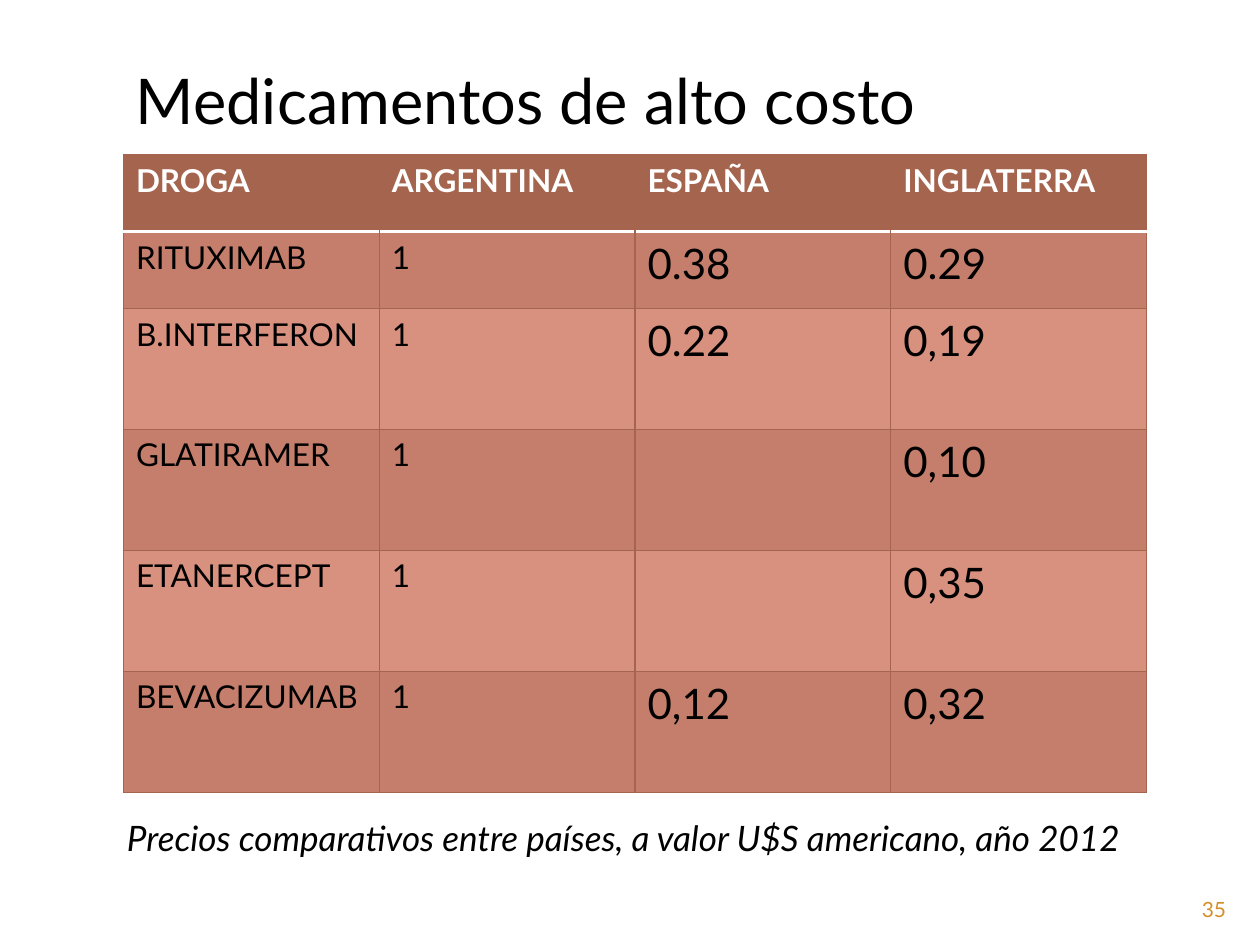
from lxml import etree
from pptx import Presentation
from pptx.dml.color import RGBColor
from pptx.enum.text import MSO_ANCHOR as ANCHOR, PP_ALIGN as ALIGN
from pptx.oxml.ns import qn
from pptx.util import Inches, Pt

COLORS = {
    "brown": "A5644E",
    "dark_band": "C47E6B",
    "light_band": "D8907F",
    "white": "FFFFFF",
    "black": "000000",
    "gold": "D48F29",
}
ROWS = [
    ["DROGA", "ARGENTINA", "ESPAÑA", "INGLATERRA"],
    ["RITUXIMAB", "1", "0.38", "0.29"],
    ["B.INTERFERON", "1", "0.22", "0,19"],
    ["GLATIRAMER", "1", "", "0,10"],
    ["ETANERCEPT", "1", "", "0,35"],
    ["BEVACIZUMAB", "1", "0,12", "0,32"],
]
ROW_HEIGHTS = [0.61, 0.61, 0.96, 0.96, 0.96, 0.96]
COLUMN_WIDTH = 2.03


def write(frame, text, size=18, color="black", bold=False, italic=False, align=ALIGN.LEFT):
    frame.word_wrap = True
    para = frame.paragraphs[0]
    para.alignment = align
    para.font.size = Pt(size)
    if not text:
        return
    span = para.add_run()
    span.text = text
    font = span.font
    font.name, font.size, font.bold, font.italic = "Lato", Pt(size), bold, italic
    font.color.rgb = RGBColor.from_string(COLORS[color])


def add_border(cell, side, color, width):
    """Draw one side (L, R, T or B) of a cell; call before filling the cell."""
    line = etree.SubElement(cell._tc.get_or_add_tcPr(), qn(f"a:ln{side}"), w=str(Pt(width)))
    if color:
        fill = etree.SubElement(line, qn("a:solidFill"))
        etree.SubElement(fill, qn("a:srgbClr"), val=COLORS[color])
    else:
        etree.SubElement(line, qn("a:noFill"))


deck = Presentation()
deck.slide_width, deck.slide_height = Inches(10), Inches(7.5)
page = deck.slides.add_slide(deck.slide_layouts[6])

last_column = len(ROWS[0]) - 1
table = page.shapes.add_table(
    len(ROWS), len(ROWS[0]), Inches(0.98), Inches(1.23),
    Inches(COLUMN_WIDTH * len(ROWS[0])), Inches(sum(ROW_HEIGHTS)),
).table
for column in table.columns:
    column.width = Inches(COLUMN_WIDTH)

for r, (values, height) in enumerate(zip(ROWS, ROW_HEIGHTS)):
    table.rows[r].height = Inches(height)
    header = r == 0
    band = "brown" if header else "dark_band" if r % 2 else "light_band"
    for c, value in enumerate(values):
        cell = table.cell(r, c)
        add_border(cell, "L", None if header and c > 0 else "brown", 0.79)
        add_border(cell, "R", None if header and c < last_column else "brown", 0.79)
        add_border(cell, "T", *(("white", 2) if r == 1 else ("brown", 0.79)))
        add_border(cell, "B", *(("white", 2) if header else ("brown", 0.79)))
        cell.fill.solid()
        cell.fill.fore_color.rgb = RGBColor.from_string(COLORS[band])
        write(cell.text_frame, value, size=24 if r > 0 and c > 1 else 18,
              color="white" if header else "black", bold=header)

TEXTS = [
    ("Medicamentos de alto costo", (0.98, 0.44, 8.03, 0.71), ANCHOR.TOP, dict(size=36)),
    ("Precios comparativos entre países, a valor U$S americano, año 2012",
     (0.91, 6.43, 8.43, 0.44), ANCHOR.TOP, dict(size=20, italic=True)),
    ("35", (9, 7.08, 0.83, 0.27), ANCHOR.MIDDLE,
     dict(size=12, color="gold", align=ALIGN.RIGHT)),
]
for text, place, anchor, style in TEXTS:
    box = page.shapes.add_textbox(*map(Inches, place))
    box.text_frame.vertical_anchor = anchor
    write(box.text_frame, text, **style)

deck.save("out.pptx")
